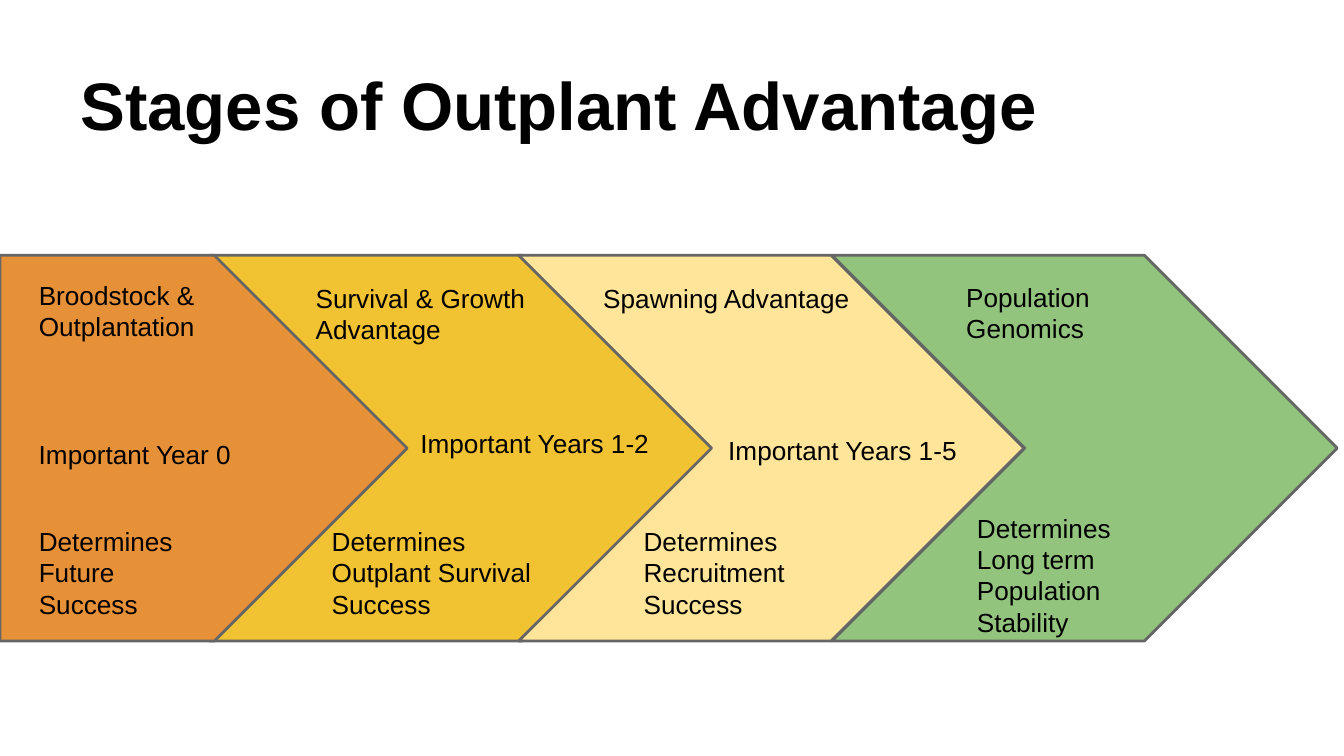
from pptx import Presentation
from pptx.dml.color import RGBColor
from pptx.enum.shapes import MSO_SHAPE
from pptx.enum.text import MSO_ANCHOR, PP_ALIGN
from pptx.util import Inches, Pt

BLACK = RGBColor(0x00, 0x00, 0x00)
GRAY = RGBColor(0x66, 0x66, 0x66)
ORANGE = RGBColor(0xE6, 0x91, 0x38)
GOLD = RGBColor(0xF1, 0xC2, 0x32)
CREAM = RGBColor(0xFF, 0xE5, 0x99)
GREEN = RGBColor(0x93, 0xC4, 0x7D)

STAGE_TOP, STAGE_HEIGHT = 1.9, 2.87
CHEVRON_WIDTH = 3.76

STAGES = [
    (MSO_SHAPE.CHEVRON, 1.56, CHEVRON_WIDTH, GOLD, [
        ("Survival & Growth\nAdvantage", 0.69, 0.1, 1.96, 0.49),
        ("Important Years 1-2", 1.47, 1.18, 2.07, 0.55),
        ("Determines\nOutplant Survival Success", 0.81, 1.91, 1.74, 0.71),
    ]),
    (MSO_SHAPE.CHEVRON, 3.86, CHEVRON_WIDTH, CREAM, [
        ("Spawning Advantage", 0.53, 0.1, 2.16, 0.55),
        ("Important Years 1-5", 1.46, 1.23, 2.07, 0.41),
        ("Determines\nRecruitment\nSuccess", 0.83, 1.91, 1.68, 0.71),
    ]),
    (MSO_SHAPE.CHEVRON, 6.19, CHEVRON_WIDTH, GREEN, [
        ("Population Genomics", 0.9, 0.09, 1.61, 0.55),
        ("Determines\nLong term Population\nStability", 0.98, 1.81, 2.01, 0.98),
    ]),
    (MSO_SHAPE.PENTAGON, 0, 3.03, ORANGE, [
        ("Broodstock &\nOutplantation", 0.19, 0.08, 1.45, 0.53),
        ("Determines Future Success", 0.19, 1.91, 1.32, 0.94),
        ("Important Year 0", 0.19, 1.26, 2.24, 0.36),
    ]),
]


def add_text(slide, text, left, top, width, height, size=14, bold=False, anchor=MSO_ANCHOR.TOP):
    """Place left-aligned text, one paragraph per line, in the given box."""
    box = slide.shapes.add_textbox(Inches(left), Inches(top), Inches(width), Inches(height))
    frame = box.text_frame
    frame.word_wrap = True
    frame.vertical_anchor = anchor
    frame.margin_left = frame.margin_right = Inches(0.1)
    frame.margin_top = frame.margin_bottom = Inches(0.1)
    frame.text = text
    for paragraph in frame.paragraphs:
        paragraph.alignment = PP_ALIGN.LEFT
        for run in paragraph.runs:
            run.font.name = "Arial"
            run.font.size = Pt(size)
            run.font.bold = bold
            run.font.color.rgb = BLACK


def add_stage(slide, outline, left, top, width, height, color, labels):
    """Draw one stage arrow and its labels, offset from the arrow's corner."""
    arrow = slide.shapes.add_shape(
        outline, Inches(left), Inches(top), Inches(width), Inches(height))
    arrow.shadow.inherit = False
    arrow.adjustments[0] = 0.5
    arrow.fill.solid()
    arrow.fill.fore_color.rgb = color
    arrow.line.color.rgb = GRAY
    arrow.line.width = Pt(1.5)
    for text, label_left, label_top, label_width, label_height in labels:
        add_text(slide, text, left + label_left, top + label_top, label_width, label_height)


def main():
    """Build the slide and save it."""
    presentation = Presentation()
    presentation.slide_width = Inches(10)
    presentation.slide_height = Inches(10) * 9 // 16
    slide = presentation.slides.add_slide(presentation.slide_layouts[6])
    add_text(slide, "Stages of Outplant Advantage", 0.5, 0.23, 9, 0.94,
             size=36, bold=True, anchor=MSO_ANCHOR.BOTTOM)
    for outline, left, width, color, labels in STAGES:
        add_stage(slide, outline, left, STAGE_TOP, width, STAGE_HEIGHT, color, labels)
    presentation.save("out.pptx")


if __name__ == "__main__":
    main()
